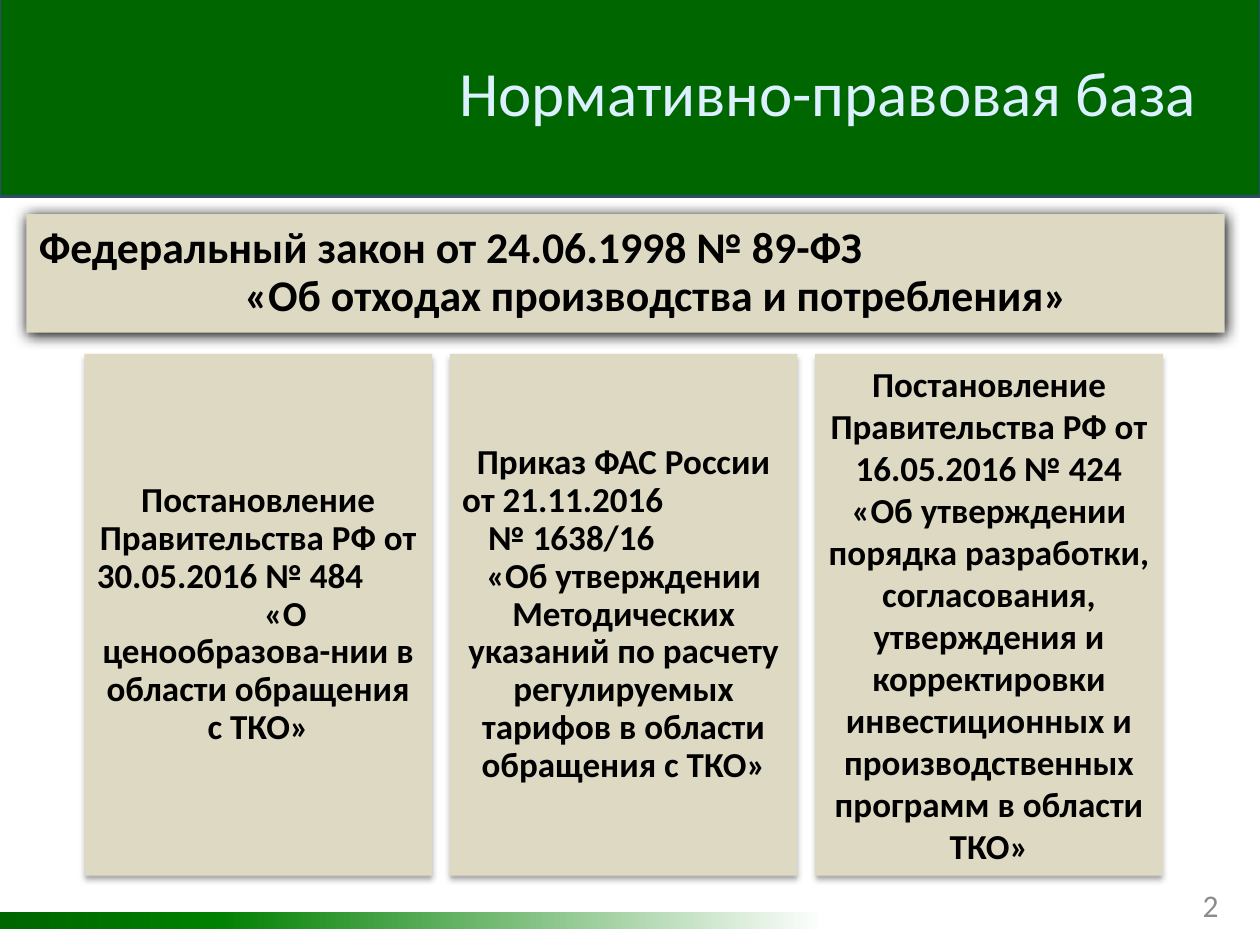
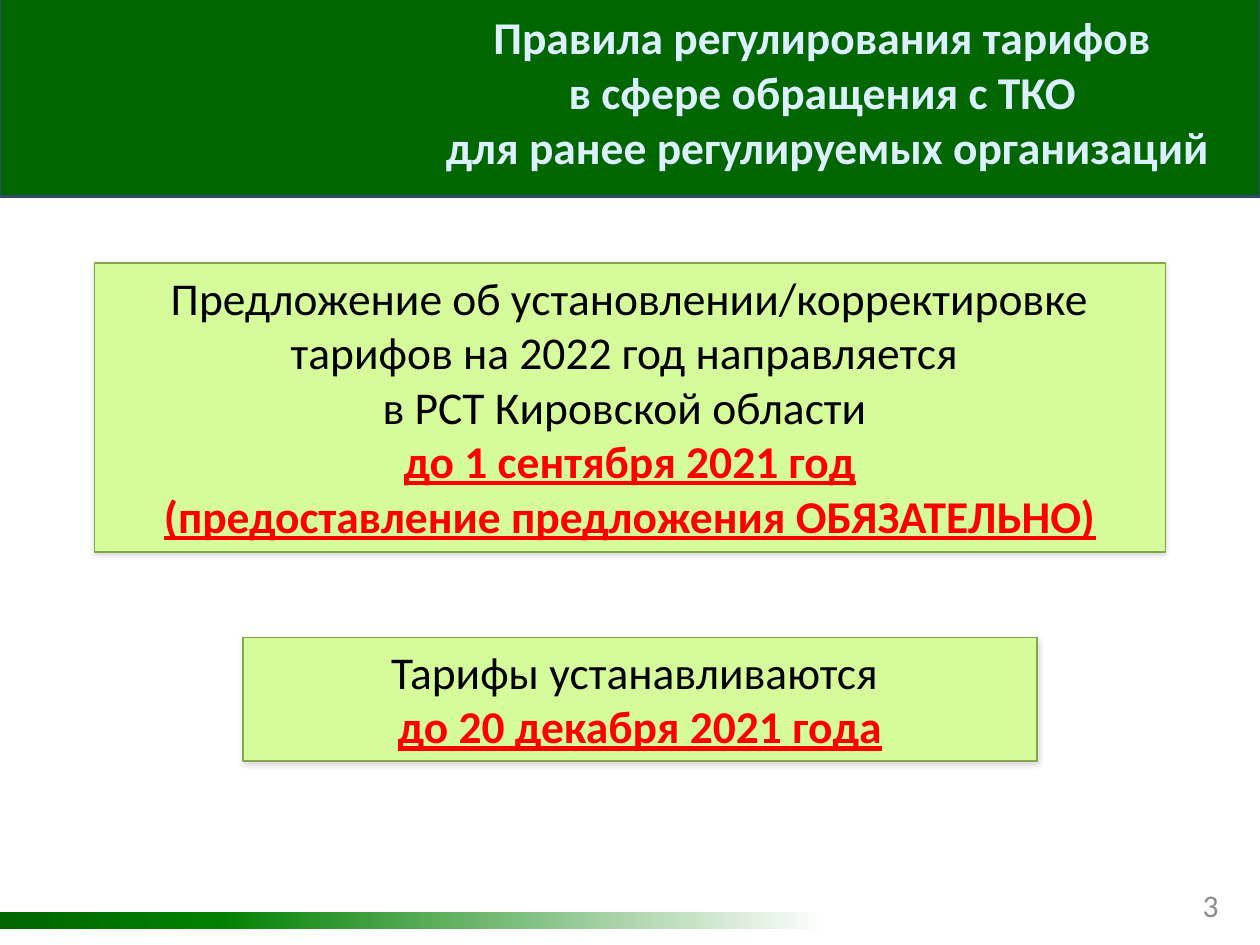
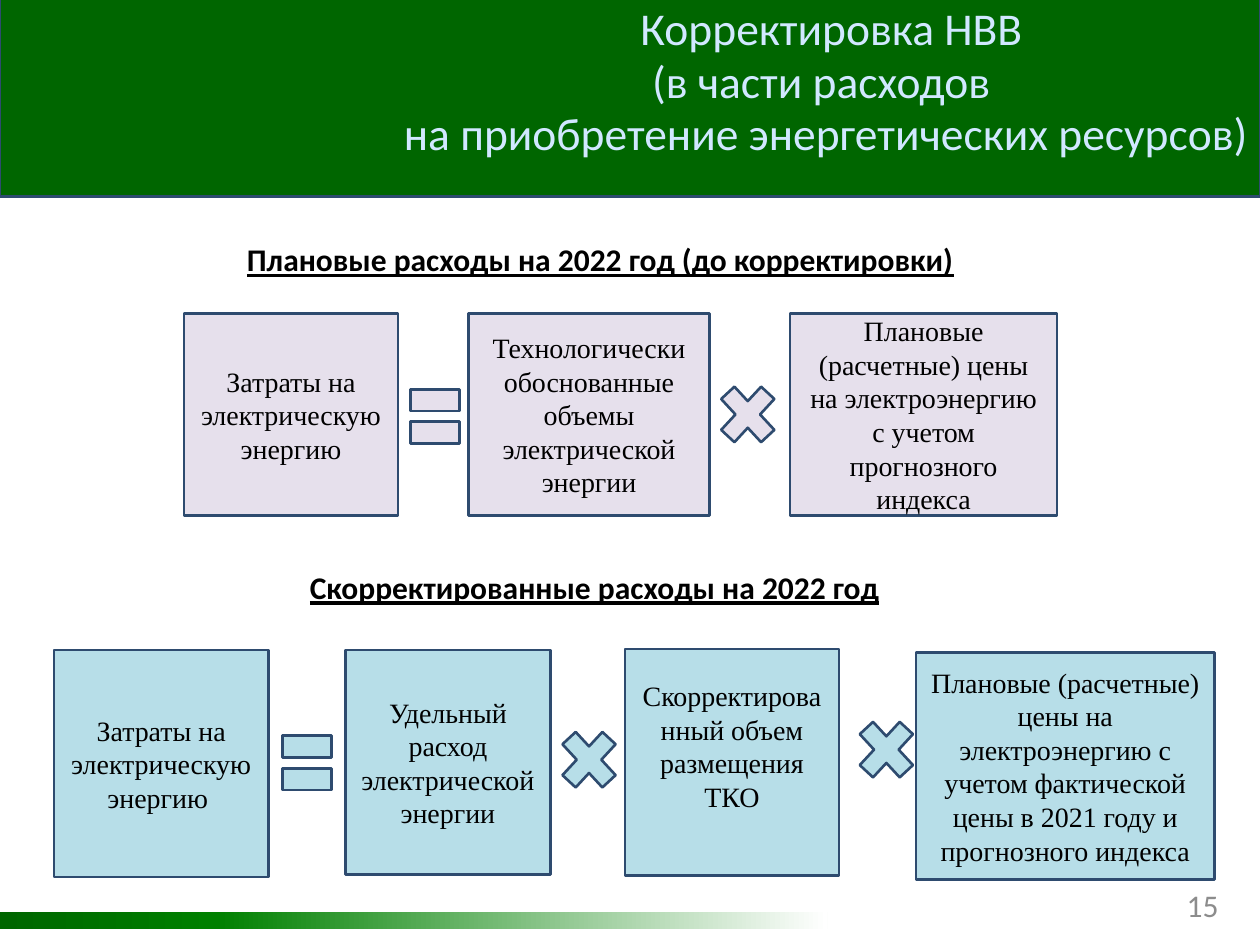
import dataclasses

import lxml.etree
import pptx
import pptx.dml.color
import pptx.enum.shapes
import pptx.enum.text
import pptx.oxml.ns
import pptx.util

Inches = pptx.util.Inches
Pt = pptx.util.Pt
Shape = pptx.enum.shapes.MSO_SHAPE
Align = pptx.enum.text.PP_ALIGN
Anchor = pptx.enum.text.MSO_ANCHOR
qn = pptx.oxml.ns.qn


@dataclasses.dataclass(frozen=True)
class Theme:
    sans: str = "Calibri"
    serif: str = "Times New Roman"
    band: str = "006600"
    outline: str = "2E4B6F"
    footer_stops: tuple = ((0, "006600"), (26, "008000"), (100, "FFFFFF"))
    title: str = "DDF0FF"
    soft_title: str = "D1E8FF"
    number: str = "8C8C8C"
    text: str = "000000"
    alert: str = "FF0000"
    law: str = "DDD9C3"
    notice: str = "D5FB9B"
    notice_line: str = "86A44A"
    planned: str = "E6E0EC"
    adjusted: str = "B7DEE8"
    cover_size: float = 36
    title_size: float = 26
    law_size: float = 25
    act_size: float = 20
    label_size: float = 18
    factor_size: float = 16
    # Shadows: opacity in percent, blur and distance in points
    card_shadow: tuple = (32, 3.5, 2.2)
    law_shadow: tuple = (100, 8.5, 1)
    notice_shadow: tuple = (15, 3, 1)


@dataclasses.dataclass(frozen=True)
class Line:
    """One paragraph; indents in inches, other values override the box style."""
    text: str
    align: Align = Align.CENTER
    left_indent: float = 0
    right_indent: float = 0
    style: dict = dataclasses.field(default_factory=dict)


def color(value):
    return pptx.dml.color.RGBColor.from_string(value)


class Deck:
    def __init__(self, theme):
        self.theme = theme
        self.presentation = pptx.Presentation()
        self.presentation.slide_width = Inches(10)
        self.presentation.slide_height = Inches(7.5)
        self.slide = None

    def new_slide(self, number):
        """Start a slide with the title band, footer strip and page number."""
        theme = self.theme
        self.slide = self.presentation.slides.add_slide(self.presentation.slide_layouts[6])
        self.shape((0, -0.03, 10, 1.59), theme.band, theme.outline)
        strip = self.shape((0, 7.24, 6.57, 0.13), theme.band)
        self.fade(strip)
        self.label((9.17, 6.98, 0.6, 0.4), [Line(number, Align.RIGHT)],
                   size=theme.label_size, fill=theme.number)

    def fade(self, shape):
        """Fill a shape with the footer gradient, left to right."""
        shape.fill.gradient()
        shape.fill.gradient_angle = 0
        stops = shape._element.spPr.find(qn("a:gradFill")).find(qn("a:gsLst"))
        for stop in list(stops):
            stops.remove(stop)
        for position, value in self.theme.footer_stops:
            stop = lxml.etree.SubElement(stops, qn("a:gs"), pos=str(position * 1000))
            lxml.etree.SubElement(stop, qn("a:srgbClr"), val=value)

    def shape(self, box, fill, line=None, line_width=1.5, shadow=None, kind=Shape.RECTANGLE):
        shape = self.slide.shapes.add_shape(kind, *map(Inches, box))
        shape.fill.solid()
        shape.fill.fore_color.rgb = color(fill)
        if line:
            shape.line.color.rgb = color(line)
            shape.line.width = Pt(line_width)
        else:
            shape.line.fill.background()
        shape.shadow.inherit = False
        if shadow:
            opacity, blur, distance = shadow
            effects = shape._element.spPr.find(qn("a:effectLst"))
            outer = lxml.etree.SubElement(
                effects, qn("a:outerShdw"), blurRad=str(Pt(blur)), dist=str(Pt(distance)),
                dir="5400000", algn="ctr", rotWithShape="0")
            shade = lxml.etree.SubElement(outer, qn("a:srgbClr"), val="000000")
            lxml.etree.SubElement(shade, qn("a:alpha"), val=str(opacity * 1000))
        return shape

    def label(self, box, lines, anchor=Anchor.MIDDLE, **style):
        shape = self.slide.shapes.add_textbox(*map(Inches, box))
        self.add_lines(shape, lines, anchor, **style)

    def add_lines(self, shape, lines, anchor=Anchor.MIDDLE, spacing=None, **style):
        frame = shape.text_frame
        frame.word_wrap = True
        frame.vertical_anchor = anchor
        for index, line in enumerate(lines):
            paragraph = frame.paragraphs[0] if index == 0 else frame.add_paragraph()
            paragraph.alignment = line.align
            if spacing:
                paragraph.line_spacing = spacing
            properties = paragraph._p.get_or_add_pPr()
            properties.set("marL", str(Inches(line.left_indent)))
            properties.set("marR", str(Inches(line.right_indent)))
            self.add_text(paragraph, line.text, **{**style, **line.style})

    def add_text(self, paragraph, text, size, fill=None, font=None, bold=False,
                 underline=False):
        run = paragraph.add_run()
        run.text = text
        run.font.name = font or self.theme.sans
        run.font.size = Pt(size)
        run.font.bold = bold
        run.font.underline = underline
        run.font.color.rgb = color(fill or self.theme.text)

    def title(self, lines, size, bold=False):
        self.label((2.87, 0.29, 7.4, 0.87), lines, size=size,
                   fill=self.theme.title, bold=bold)

    def law_card(self, box, lines, size, shadow, spacing=None):
        card = self.shape(box, self.theme.law, shadow=shadow)
        self.add_lines(card, lines, spacing=spacing, size=size, bold=True)

    def notice(self, box, lines):
        theme = self.theme
        card = self.shape(box, theme.notice, theme.notice_line, 1, theme.notice_shadow)
        self.add_lines(card, lines, Anchor.TOP, size=theme.title_size)

    def factor(self, box, text, fill):
        card = self.shape(box, fill, self.theme.outline)
        self.add_lines(card, [Line(text)], size=self.theme.factor_size, font=self.theme.serif)
        return card

    def equals(self, left, top, fill):
        self.shape((left, top, 0.53, 0.73), fill, self.theme.outline, kind=Shape.MATH_EQUAL)

    def times(self, left, top, fill):
        self.shape((left, top, 0.61, 0.66), fill, self.theme.outline, kind=Shape.MATH_MULTIPLY)

    def heading(self, box, text):
        self.label(box, [Line(text)], Anchor.TOP, size=self.theme.label_size,
                   bold=True, underline=True)


def legal_basis(deck):
    theme = deck.theme
    deck.new_slide("2")
    deck.title([Line("Нормативно-правовая база")], theme.cover_size)

    # Federal law above the three acts
    deck.law_card((0.21, 1.7, 9.51, 0.94), [
        Line("Федеральный закон от 24.06.1998 № 89-ФЗ", Align.LEFT),
        Line("«Об отходах производства и потребления»", left_indent=0.48),
    ], theme.law_size, theme.law_shadow, 0.9)

    acts = [
        ([Line("Постановление Правительства РФ от"),
          Line("30.05.2016 № 484", Align.LEFT),
          Line("«О", left_indent=0.43),
          Line("ценообразова-нии в области обращения с ТКО»")], 0.9),
        ([Line("Приказ ФАС России"),
          Line("от 21.11.2016", Align.LEFT),
          Line("№ 1638/16", right_indent=0.83),
          Line("«Об утверждении Методических указаний по расчету регулируемых "
               "тарифов в области обращения с ТКО»")], 0.9),
        ([Line("Постановление Правительства РФ от 16.05.2016 № 424 «Об утверждении "
               "порядка разработки, согласования, утверждения и корректировки "
               "инвестиционных и производственных программ в области ТКО»")], None),
    ]
    for column, (lines, spacing) in enumerate(acts):
        deck.law_card((0.67 + 2.9 * column, 2.81, 2.76, 4.14), lines,
                      theme.act_size, theme.card_shadow, spacing)


def regulation_rules(deck):
    theme = deck.theme
    deadline = {"fill": theme.alert, "bold": True, "underline": True}
    deck.new_slide("3")
    deck.title([
        Line("Правила регулирования тарифов "),
        Line("в сфере обращения с ТКО "),
        Line("для ранее регулируемых организаций"),
    ], theme.title_size, bold=True)

    # Deadlines
    deck.notice((0.75, 2.09, 8.5, 2.29), [
        Line("Предложение об установлении/корректировке тарифов на 2022 год направляется "),
        Line("в РСТ Кировской области "),
        Line("до 1 сентября 2021 год", style=deadline),
        Line("(предоставление предложения ОБЯЗАТЕЛЬНО)", style=deadline),
    ])
    deck.notice((1.93, 5.06, 6.3, 0.98), [
        Line("Тарифы устанавливаются "),
        Line("до 20 декабря 2021 года", style=deadline),
    ])


def energy_adjustment(deck):
    theme = deck.theme
    deck.new_slide("15")
    deck.label((2.06, -0.03, 9, 1.1), [
        Line(" Корректировка НВВ"),
        Line("(в части расходов "),
        Line("на приобретение энергетических ресурсов)"),
    ], Anchor.TOP, spacing=Pt(30), size=theme.title_size, fill=theme.soft_title)

    # Planned costs
    deck.heading((1.85, 1.86, 5.83, 0.4), "Плановые расходы на 2022 год (до корректировки)")
    for left, width, text in [
        (1.46, 1.7, "Затраты на электрическую энергию"),
        (3.72, 1.91, "Технологически обоснованные объемы электрической энергии"),
        (6.27, 2.12, "Плановые (расчетные) цены на электроэнергию с учетом "
                     "прогнозного индекса"),
    ]:
        deck.factor((left, 2.49, width, 1.6), text, theme.planned)
    deck.equals(3.19, 2.94, theme.planned)
    deck.times(5.63, 2.96, theme.planned)

    # Adjusted costs
    deck.heading((0.35, 4.46, 8.74, 0.4), "Скорректированные расходы на 2022 год")
    for left, top, width, height, text in [
        (0.43, 5.16, 1.7, 1.8, "Затраты на электрическую энергию "),
        (2.74, 5.16, 1.63, 1.78, "Удельный расход электрической энергии"),
        (7.27, 5.18, 2.37, 1.8, "Плановые (расчетные) цены на электроэнергию с учетом "
                                "фактической цены в 2021 году и прогнозного индекса"),
    ]:
        deck.factor((left, top, width, height), text, theme.adjusted)
    volume = deck.factor((4.96, 5.15, 1.7, 1.8),
                         "Скорректированный объем размещения ТКО", theme.adjusted)
    volume.text_frame.margin_bottom = Inches(0.31)
    deck.equals(2.17, 5.69, theme.adjusted)
    deck.times(4.37, 5.7, theme.adjusted)
    deck.times(6.73, 5.62, theme.adjusted)


def main():
    deck = Deck(Theme())
    legal_basis(deck)
    regulation_rules(deck)
    energy_adjustment(deck)
    deck.presentation.save("out.pptx")


if __name__ == "__main__":
    main()
